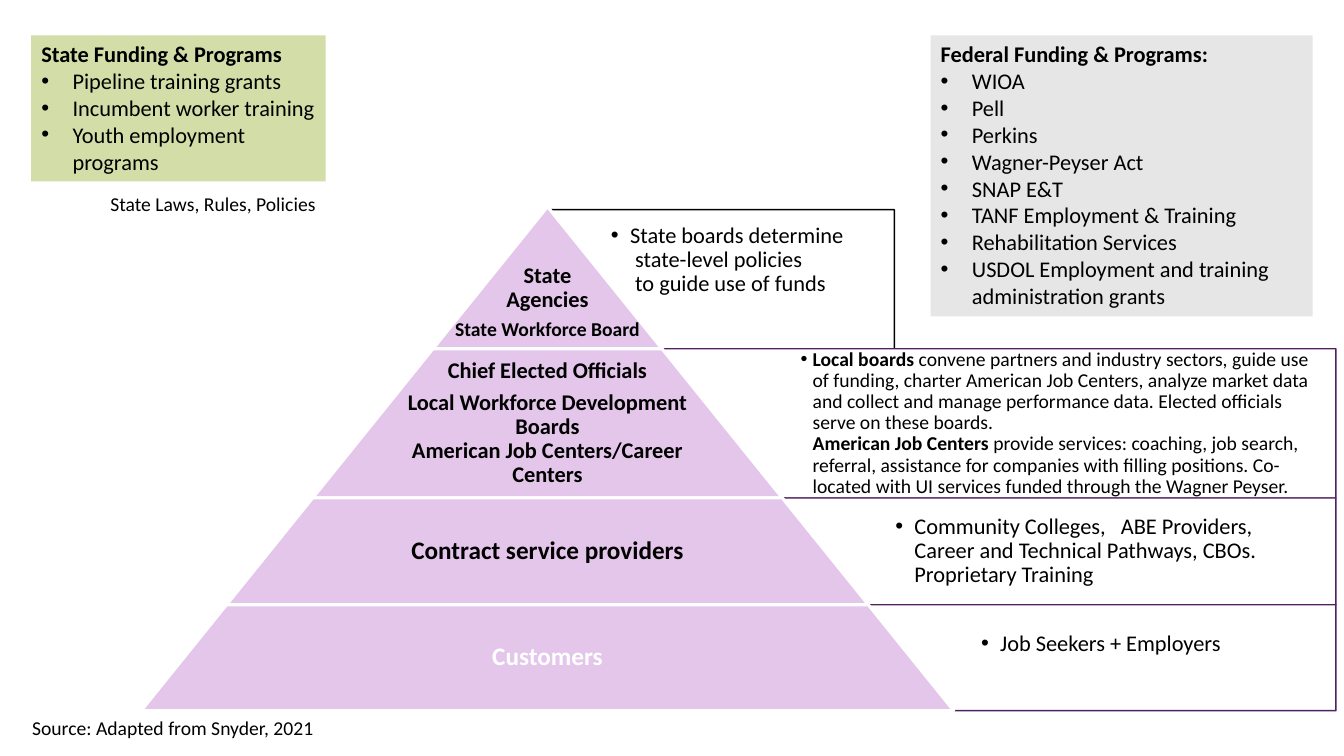
from dataclasses import dataclass

from lxml import etree
from pptx import Presentation
from pptx.dml.color import RGBColor
from pptx.enum.shapes import MSO_SHAPE
from pptx.enum.text import MSO_ANCHOR, MSO_AUTO_SIZE, PP_ALIGN
from pptx.oxml.ns import qn
from pptx.util import Inches, Pt

TRAPEZOID = MSO_SHAPE.TRAPEZOID
SIDE_TRAPEZOID = MSO_SHAPE.NON_ISOSCELES_TRAPEZOID
TOP, MIDDLE = MSO_ANCHOR.TOP, MSO_ANCHOR.MIDDLE
LEFT, CENTER, RIGHT = PP_ALIGN.LEFT, PP_ALIGN.CENTER, PP_ALIGN.RIGHT
NO_AUTOFIT = MSO_AUTO_SIZE.NONE

FONT = "Calibri"
BLACK, WHITE = "000000", "FFFFFF"
LILAC, PURPLE = "E4C6EB", "51205E"
GREEN, GRAY = "D2DDA8", "E7E6E6"

APEX_X, APEX_Y = 5.43, 2.05
SLOPE = 0.806
PANEL_INSET = 0.27


@dataclass
class Run:
    text: str
    bold: bool = False
    size: float = 16
    color: str = BLACK


@dataclass
class Panel:
    top: float
    right: float
    line: str
    text_left: float
    text_width: float
    indent: float
    inset_y: float
    anchor: MSO_ANCHOR
    runs: list[Run]


@dataclass
class Tier:
    top: float
    bottom: float
    label_share: float
    label_inset_top: float
    labels: list[Run]
    panel: Panel


@dataclass
class FundingList:
    box: tuple[float, float, float, float]
    fill: str
    heading: str
    items: list[str]


TIERS = [
    Tier(2.05, 3.46, 1, 0.51,
         [Run("State\nAgencies", True), Run("State Workforce Board", True, 14)],
         Panel(2.08, 8.87, BLACK, 5.79, 2.94, 0.19, 0.14, TOP,
               [Run("State boards determine\n state-level policies\n to guide use of funds")])),
    Tier(3.46, 4.94, 0.65, 0.02,
         [Run("Chief Elected Officials", True),
          Run("Local Workforce Development Boards\nAmerican Job Centers/Career Centers", True)],
         Panel(3.46, 13.25, PURPLE, 7.67, 5.6, 0.12, 0, MIDDLE,
               [Run("Local boards ", True, 14),
                Run("convene partners and industry sectors, guide use of funding, charter "
                    "American Job Centers, analyze market data and collect and manage "
                    "performance data. Elected officials serve on these boards. \n", size=14),
                Run("American Job Centers ", True, 14),
                Run("provide services: coaching, job search, referral, assistance for "
                    "companies with filling positions. Co-located with UI services funded "
                    "through the Wagner Peyser.", size=14)])),
    Tier(4.94, 6, 0.65, 0.02,
         [Run("Contract service providers", True, 18)],
         Panel(4.94, 13.25, PURPLE, 8.61, 4.64, 0.19, PANEL_INSET, MIDDLE,
               [Run("Community Colleges,   ABE Providers, Career and Technical "
                    "Pathways, CBOs. Proprietary Training")])),
    Tier(6, 7.05, 0.65, 0.02,
         [Run("Customers", True, 18, WHITE)],
         Panel(6, 13.25, PURPLE, 9.46, 3.79, 0.19, PANEL_INSET, TOP,
               [Run("Job Seekers + Employers")])),
]

FUNDING = [
    FundingList((0.31, 0.35, 2.92, 1.45), GREEN, "State Funding & Programs",
                ["Pipeline training grants", "Incumbent worker training",
                 "Youth employment programs"]),
    FundingList((9.23, 0.35, 3.79, 2.79), GRAY, "Federal Funding & Programs:",
                ["WIOA", "Pell", "Perkins", "Wagner-Peyser Act", "SNAP E&T",
                 "TANF Employment & Training", "Rehabilitation Services",
                 "USDOL Employment and training administration grants"]),
]


def rgb(value: str) -> RGBColor:
    return RGBColor.from_string(value)


def place(sp, left: float, top: float, width: float, height: float) -> None:
    sp.left, sp.top = Inches(left), Inches(top)
    sp.width, sp.height = Inches(width), Inches(height)


def set_bullet(p, indent: float) -> None:
    """Hang a bullet by the indent; a zero indent means no bullet."""
    pPr = p._p.get_or_add_pPr()
    pPr.set("marL", str(Inches(indent)))
    pPr.set("indent", str(-Inches(indent)))
    if indent:
        etree.SubElement(pPr, qn("a:buFont")).set("typeface", "Arial")
        etree.SubElement(pPr, qn("a:buChar")).set("char", "•")
    else:
        etree.SubElement(pPr, qn("a:buNone"))


def add_runs(p, runs: list[Run]) -> None:
    for run in runs:
        for i, line in enumerate(run.text.split("\n")):
            if i:
                p.add_line_break()
            if line:
                r = p.add_run()
                r.text = line
                r.font.name, r.font.size = FONT, Pt(run.size)
                r.font.bold = run.bold
                r.font.color.rgb = rgb(run.color)


def write(tf, paragraphs: list[list[Run]], indents: list[float], align=LEFT,
          spacing: float = 1, after: float = 0) -> None:
    for i, (runs, indent) in enumerate(zip(paragraphs, indents)):
        p = tf.add_paragraph() if i else tf.paragraphs[0]
        p.alignment, p.line_spacing = align, spacing
        p.space_before = Pt(0)
        p.space_after = Pt(after if i < len(paragraphs) - 1 else 0)
        set_bullet(p, indent)
        add_runs(p, runs)


def add_text_frame(slide, left: float, top: float, width: float, height: float,
                   inset_x: float = 0.1, inset_top: float = 0.05,
                   inset_bottom: float = 0.05, anchor=TOP):
    tf = slide.shapes.add_textbox(*map(Inches, (left, top, width, height))).text_frame
    tf.word_wrap, tf.auto_size = True, NO_AUTOFIT
    tf.margin_left = tf.margin_right = Inches(inset_x)
    tf.margin_top, tf.margin_bottom = Inches(inset_top), Inches(inset_bottom)
    tf.vertical_anchor = anchor
    return tf


def add_outline(slide, kind, left: float, top: float, width: float, height: float,
                fill: str, line: str, weight: float):
    sp = slide.shapes.add_shape(kind, *map(Inches, (left, top, width, height)))
    sp.shadow.inherit = False
    sp.fill.solid()
    sp.fill.fore_color.rgb = rgb(fill)
    sp.line.color.rgb = rgb(line)
    sp.line.width = Pt(weight)
    return sp


def add_tier(slide, tier: Tier) -> None:
    height = tier.bottom - tier.top
    panel = tier.panel

    # Side panel and its description
    left = APEX_X + SLOPE * (tier.top - APEX_Y)
    sp = add_outline(slide, SIDE_TRAPEZOID, left, panel.top, panel.right - left,
                     tier.bottom - panel.top, WHITE, panel.line, 1)
    sp.adjustments[0], sp.adjustments[1] = 0, SLOPE
    sp.rotation = 180
    tf = add_text_frame(slide, panel.text_left, panel.top, panel.text_width, height,
                        PANEL_INSET, panel.inset_y, panel.inset_y, panel.anchor)
    write(tf, [panel.runs], [panel.indent], spacing=0.9)

    # Pyramid tier and its label
    width = 2 * SLOPE * (tier.bottom - APEX_Y)
    sp = add_outline(slide, TRAPEZOID, APEX_X - width / 2, tier.top, width, height,
                     LILAC, WHITE, 2.25)
    sp.adjustments[0] = SLOPE
    width *= tier.label_share
    tf = add_text_frame(slide, APEX_X - width / 2, tier.top, width, height,
                        0.02, tier.label_inset_top, 0.02, MIDDLE)
    write(tf, [[label] for label in tier.labels], [0] * len(tier.labels), CENTER, 0.9, 5.6)


def fill_funding_list(sp, funding: FundingList) -> None:
    place(sp, *funding.box)
    sp.fill.solid()
    sp.fill.fore_color.rgb = rgb(funding.fill)
    tf = sp.text_frame
    tf.word_wrap, tf.auto_size, tf.vertical_anchor = True, NO_AUTOFIT, TOP
    paragraphs = [[Run(funding.heading, True)]] + [[Run(item)] for item in funding.items]
    write(tf, paragraphs, [0] + [0.31] * len(funding.items))


def main() -> None:
    prs = Presentation()
    prs.slide_width, prs.slide_height = Inches(13.33), Inches(7.5)
    slide = prs.slides.add_slide(prs.slide_layouts[3])
    title, *bodies = slide.placeholders
    title._element.getparent().remove(title._element)

    # Funding lists
    for sp, funding in zip(bodies, FUNDING):
        fill_funding_list(sp, funding)

    # Pyramid
    for tier in TIERS:
        add_tier(slide, tier)

    # Caption and source
    tf = add_text_frame(slide, 0.31, 1.85, 2.92, 0.44)
    write(tf, [[Run("State Laws, Rules, Policies", size=14)]], [0], RIGHT)
    tf = add_text_frame(slide, 0.22, 7.05, 5.11, 0.34)
    write(tf, [[Run("Source: Adapted from Snyder, 2021", size=14)]], [0])

    prs.save("out.pptx")


if __name__ == "__main__":
    main()
